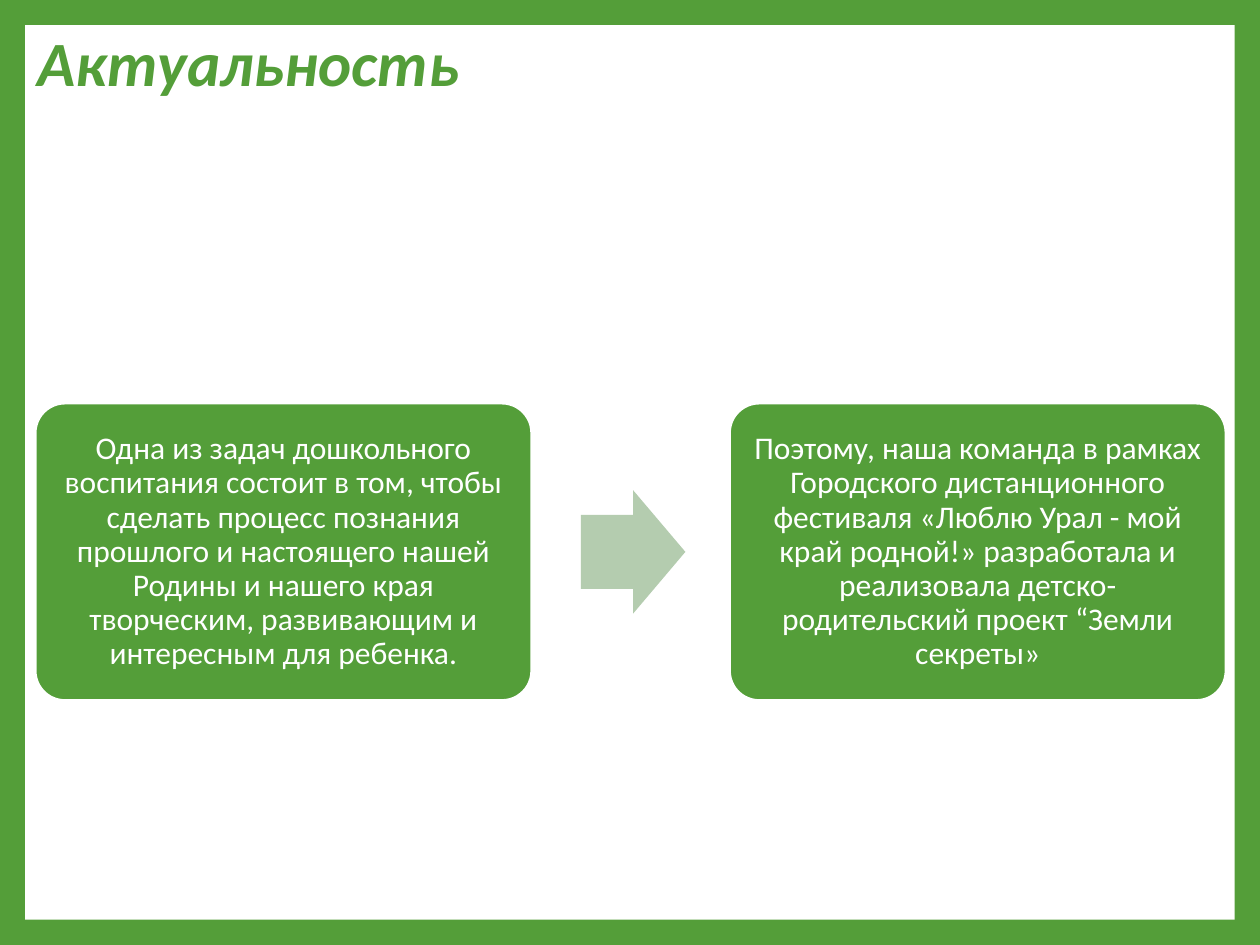
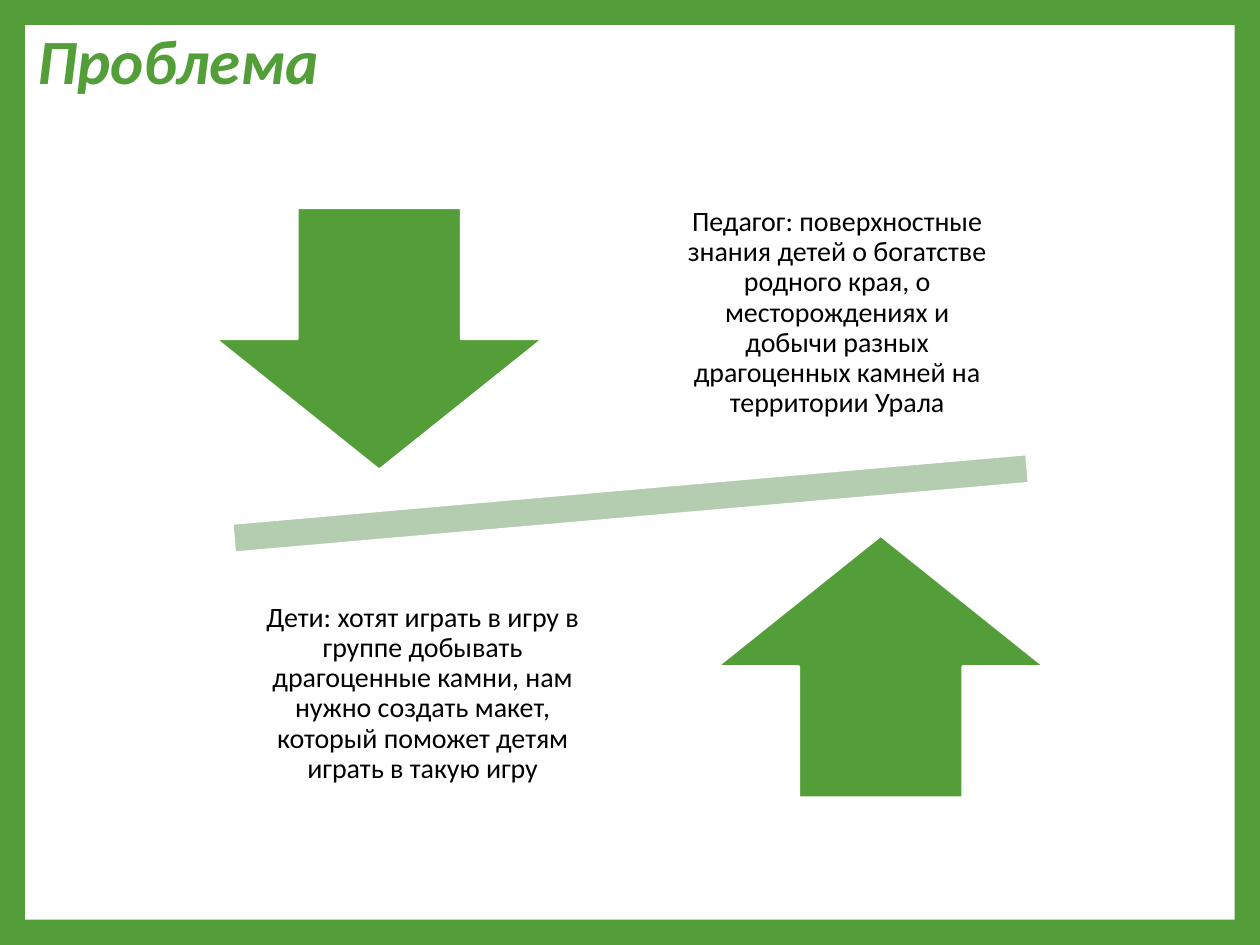
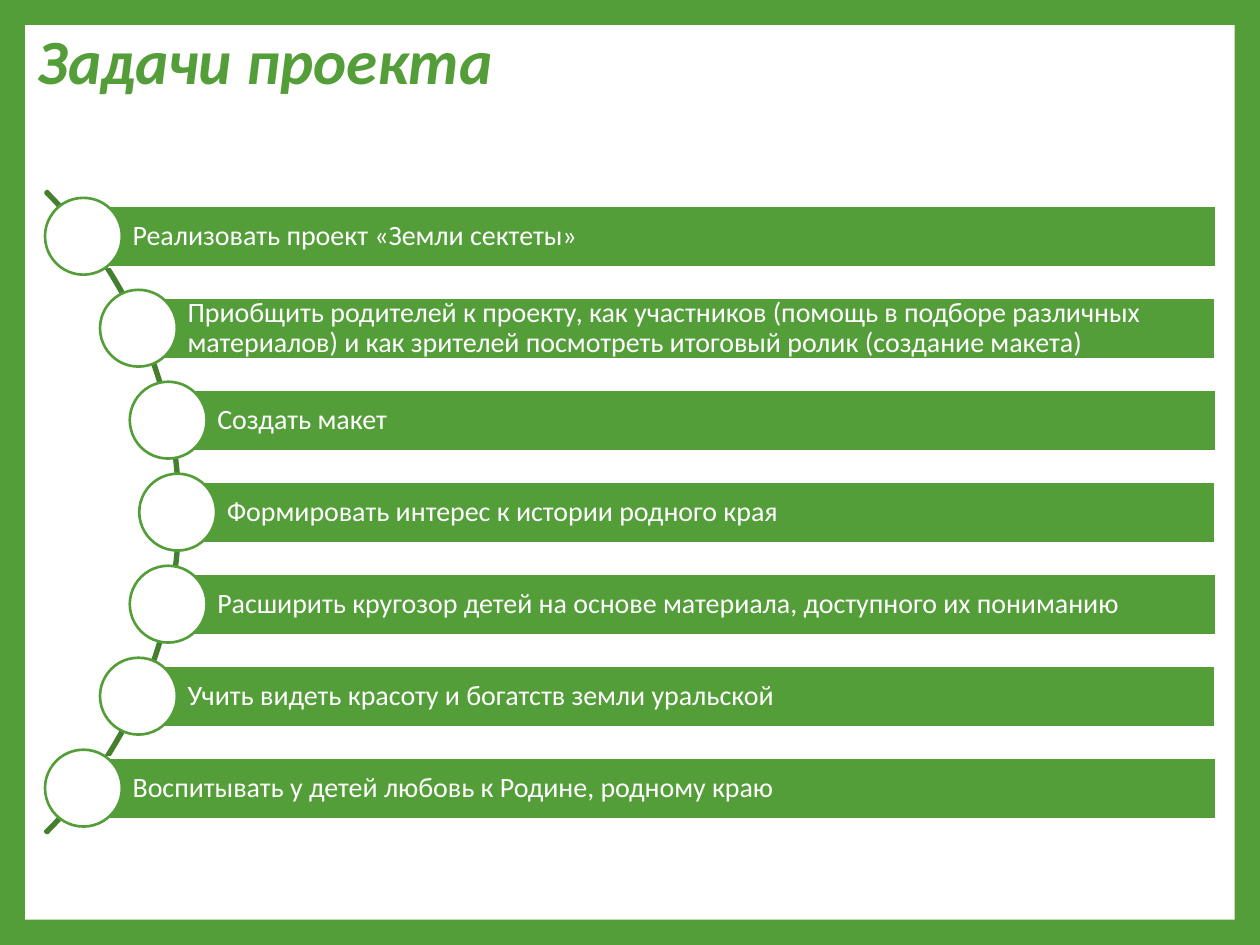
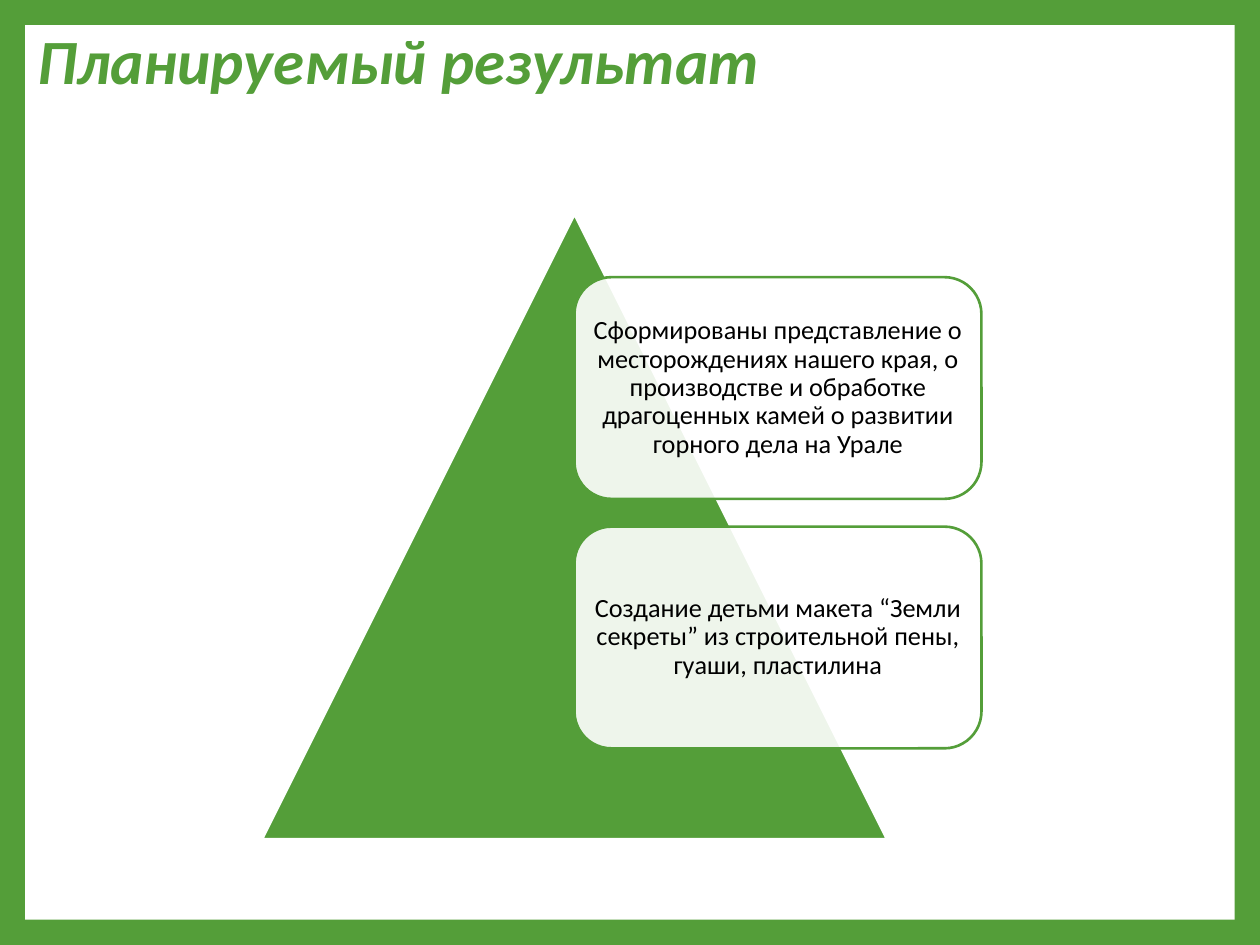
from math import sqrt
from lxml import etree
from pptx import Presentation
from pptx.dml.color import RGBColor
from pptx.enum import shapes as es, text as et
from pptx.oxml import ns
from pptx.util import Inches, Pt

COLORS = {"green": "549E39", "pale": "B4CCAF", "dark": "437F2E",
          "white": "FFFFFF", "black": "000000"}
FONT = "Calibri"
KIND = es.MSO_SHAPE
TITLES = [("Актуальность", 0.9), ("Проблема", 0.8),
          ("Задачи проекта", 0.8), ("Планируемый результат", 0.8)]
REASONS = [
    "Одна из задач дошкольного воспитания состоит в том, чтобы сделать процесс познания прошлого и настоящего нашей Родины и нашего края творческим, развивающим и интересным для ребенка.",
    "Поэтому, наша команда в рамках Городского дистанционного фестиваля «Люблю Урал - мой край родной!» разработала и реализовала детско-родительский проект “Земли секреты»",
]
SIDES = [
    (KIND.DOWN_ARROW, (1.71, 1.65), (5.26, 1.39),
     "Педагог: поверхностные знания детей о богатстве родного края, о месторождениях и добычи разных драгоценных камней на территории Урала"),
    (KIND.UP_ARROW, (5.69, 4.25), (1.97, 4.41),
     "Дети: хотят играть в игру в группе добывать драгоценные камни, нам нужно создать макет, который поможет детям играть в такую игру"),
]
TASKS = [
    "Реализовать проект «Земли сектеты»",
    "Приобщить родителей к проекту, как участников (помощь в подборе различных материалов) и как зрителей посмотреть итоговый ролик (создание макета)",
    "Создать макет",
    "Формировать интерес к истории родного края",
    "Расширить кругозор детей на основе материала, доступного их пониманию",
    "Учить видеть красоту и богатств земли уральской",
    "Воспитывать у детей любовь к Родине, родному краю",
]
RESULTS = [
    "Сформированы представление о месторождениях нашего края, о производстве и обработке драгоценных камей о развитии горного дела на Урале",
    "Создание детьми макета “Земли секреты” из строительной пены, гуаши, пластилина",
]


def rgb(name):
    return RGBColor.from_string(COLORS[name])


def write(shape, words, size, color, pads, align="CENTER", gap=0.9, **style):
    frame = shape.text_frame
    sides = ("left", "top", "right", "bottom")
    look = {f"margin_{s}": Inches(p) for s, p in zip(sides, pads)}
    look |= {"word_wrap": True, "auto_size": et.MSO_AUTO_SIZE.NONE,
             "vertical_anchor": et.MSO_ANCHOR.MIDDLE}
    for key, val in look.items():
        setattr(frame, key, val)
    frame.text = words
    para = frame.paragraphs[0]
    para.alignment = getattr(et.PP_ALIGN, align)
    para.line_spacing = gap
    font = para.runs[0].font
    for key, val in {"name": FONT, "size": Pt(size), **style}.items():
        setattr(font, key, val)
    font.color.rgb = rgb(color)


def draw(slide, kind, box, fill=None, line="white", adj=(), turn=0):
    shape = slide.shapes.add_shape(kind, *map(Inches, box))
    shape.shadow.inherit = False
    shape.rotation = turn
    for i, val in enumerate(adj):
        shape.adjustments[i] = val
    if fill:
        shape.fill.solid()
        shape.fill.fore_color.rgb = rgb(fill)
    else:
        shape.fill.background()
    if line:
        shape.line.color.rgb = rgb(line)
        shape.line.width = Pt(1.5)
    else:
        shape.line.fill.background()
    return shape


def fade(shape, share):
    tone = shape.fill._xPr.find(".//" + ns.qn("a:srgbClr"))
    etree.SubElement(tone, ns.qn("a:alpha"), val=str(share * 1000))


def start(deck, words, gap):
    slide = deck.slides.add_slide(deck.slide_layouts[5])
    title = slide.shapes.title
    spot = dict(left=0.2, top=0.21, width=9.61, height=0.63)
    for key, val in spot.items():
        setattr(title, key, Inches(val))
    write(title, words, 36, "green", (0.1, 0.05, 0.1, 0.05), "LEFT", gap,
          bold=True, italic=True)
    return slide


def frame(deck, slide):
    back = deck.slide_master.background.fill
    back.solid()
    back.fore_color.rgb = rgb("green")
    panel = draw(slide, KIND.RECTANGLE, (0.2, 0.2, 9.6, 7.1), "white", None)
    slide.slide_layout.shapes.element.insert(2, panel.element)


def reason(slide):
    for i, words in enumerate(REASONS):
        card = draw(slide, KIND.ROUNDED_RECTANGLE,
                    (0.28 + 5.51 * i, 3.2, 3.94, 2.36), "green", adj=[0.1])
        write(card, words, 18, "white", [0.07] * 4)
    draw(slide, KIND.RIGHT_ARROW, (4.61, 3.89, 0.83, 0.98), "pale", None,
         [0.6, 0.5])


def problem(slide):
    draw(slide, KIND.MATH_MINUS, (0.7, 3.5, 8.61, 0.99), "pale", turn=355)
    for kind, spot, place, words in SIDES:
        draw(slide, kind, (*spot, 2.6, 2.08), "green")
        note = slide.shapes.add_textbox(*map(Inches, (*place, 2.77, 2.19)))
        write(note, words, 16, "black", [0.12] * 4)


def tasks(slide):
    draw(slide, KIND.BLOCK_ARC, (-5.78, 0.46, 7.21, 7.21), line="dark",
         adj=[189, 27, 0.003])
    step, high, dot, edge = 0.73, 0.49, 0.61, 9.65
    for i, words in enumerate(TASKS):
        rise = (i - len(TASKS) // 2) * step
        mid = 4.065 + rise
        left = sqrt(3.58 ** 2 - rise ** 2) - 2.17
        bar = draw(slide, KIND.RECTANGLE,
                   (left, mid - high / 2, edge - left, high), "green")
        write(bar, words, 16, "white", (0.39, 0.04, 0.04, 0.04), "LEFT")
        draw(slide, KIND.OVAL, (left - dot / 2, mid - dot / 2, dot, dot),
             "white", "green")


def result(slide):
    draw(slide, KIND.ISOSCELES_TRIANGLE, (2.08, 1.7, 4.96, 4.96), "green")
    for i, words in enumerate(RESULTS):
        card = draw(slide, KIND.ROUNDED_RECTANGLE,
                    (4.56, 2.2 + 1.98 * i, 3.23, 1.76), "white", "green")
        fade(card, 90)
        write(card, words, 15, "black", [0.06] * 4)


def main():
    deck = Presentation()
    deck.slide_width, deck.slide_height = Inches(10), Inches(7.5)
    pages = [start(deck, *title) for title in TITLES]
    frame(deck, pages[0])
    for fill, page in zip((reason, problem, tasks, result), pages):
        fill(page)
    deck.save("out.pptx")


if __name__ == "__main__":
    main()
